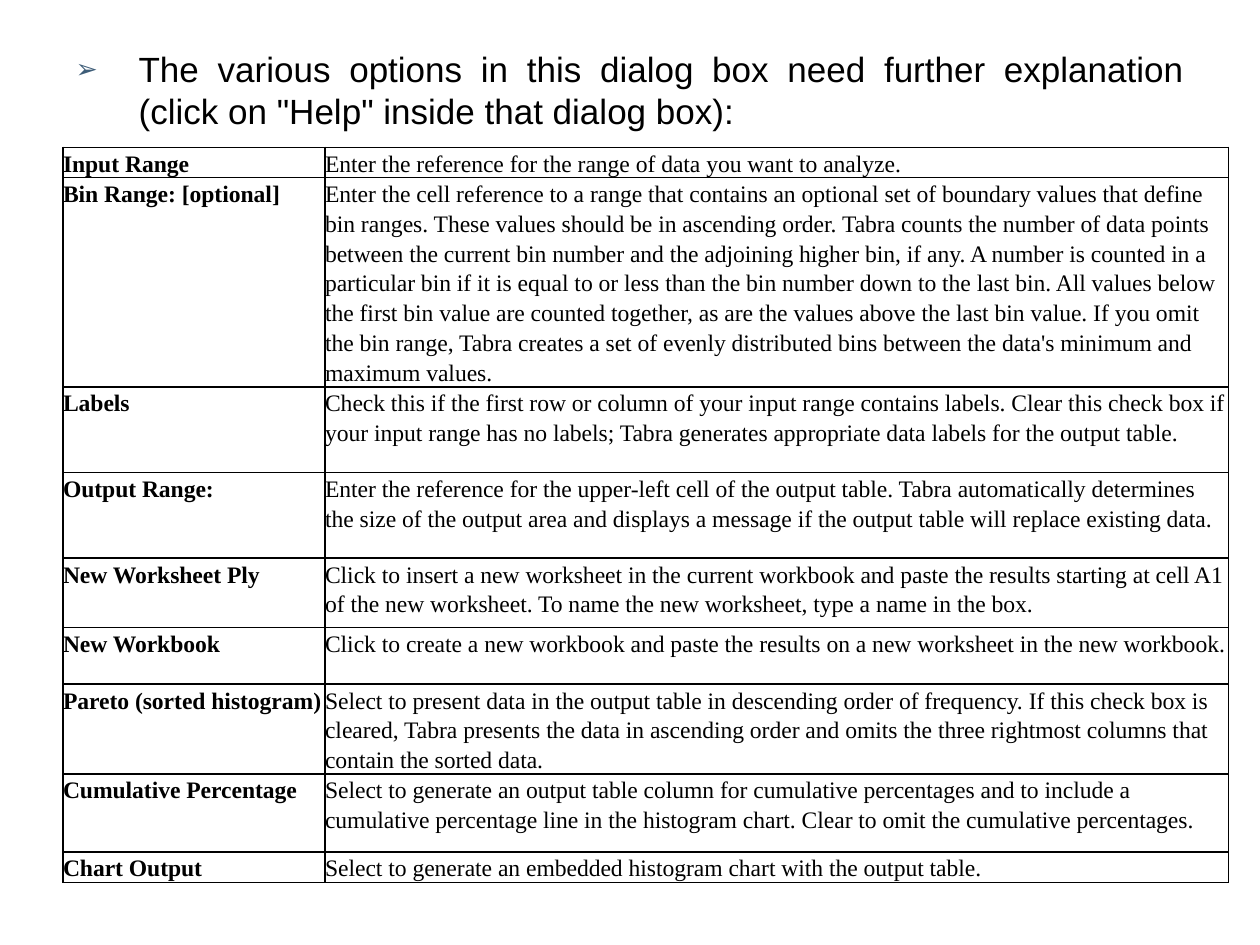
"""Build a slide that explains the options of the histogram dialog box."""
from lxml import etree
from pptx import Presentation
from pptx.dml.color import RGBColor
from pptx.enum.text import MSO_AUTO_SIZE, PP_ALIGN
from pptx.oxml.ns import qn
from pptx.util import Inches, Pt

JUSTIFY = PP_ALIGN.JUSTIFY
NO_AUTOFIT = MSO_AUTO_SIZE.NONE
BLACK = RGBColor(0x00, 0x00, 0x00)
BULLET = RGBColor(0x3E, 0x5D, 0x78)

OPTIONS = [
    (0.23, "Input Range",
     "Enter the reference for the range of data you want to analyze."),
    (1.58, "Bin Range: [optional]",
     "Enter the cell reference to a range that contains an optional set of boundary "
     "values that define bin ranges. These values should be in ascending order. Tabra "
     "counts the number of data points between the current bin number and the adjoining "
     "higher bin, if any. A number is counted in a particular bin if it is equal to or "
     "less than the bin number down to the last bin. All values below the first bin value "
     "are counted together, as are the values above the last bin value. If you omit the "
     "bin range, Tabra creates a set of evenly distributed bins between the data's "
     "minimum and maximum values."),
    (0.68, "Labels",
     "Check this if the first row or column of your input range contains labels. Clear "
     "this check box if your input range has no labels; Tabra generates appropriate data "
     "labels for the output table."),
    (0.68, "Output Range:",
     "Enter the reference for the upper-left cell of the output table. Tabra automatically "
     "determines the size of the output area and displays a message if the output table "
     "will replace existing data."),
    (0.55, "New Worksheet Ply",
     "Click to insert a new worksheet in the current workbook and paste the results "
     "starting at cell A1 of the new worksheet. To name the new worksheet, type a name in "
     "the box."),
    (0.45, "New Workbook",
     "Click to create a new workbook and paste the results on a new worksheet in the new "
     "workbook."),
    (0.68, "Pareto (sorted histogram)",
     "Select to present data in the output table in descending order of frequency. If this "
     "check box is cleared, Tabra presents the data in ascending order and omits the three "
     "rightmost columns that contain the sorted data."),
    (0.62, "Cumulative Percentage",
     "Select to generate an output table column for cumulative percentages and to include "
     "a cumulative percentage line in the histogram chart. Clear to omit the cumulative "
     "percentages."),
    (0.24, "Chart Output",
     "Select to generate an embedded histogram chart with the output table."),
]


def style_run(r, font, size, bold=False):
    r.font.name = font
    r.font.size = Pt(size)
    r.font.bold = bold
    r.font.color.rgb = BLACK


def add_borders(cell):
    tc_pr = cell._tc.get_or_add_tcPr()
    for side in ("a:lnL", "a:lnR", "a:lnT", "a:lnB"):
        ln = etree.SubElement(tc_pr, qn(side), w=str(Pt(1)))
        fill = etree.SubElement(ln, qn("a:solidFill"))
        etree.SubElement(fill, qn("a:srgbClr"), val=str(BLACK))


prs = Presentation()
prs.slide_width = Inches(10)
prs.slide_height = Inches(7.5)
s = prs.slides.add_slide(prs.slide_layouts[1])
title = s.shapes.title
title.element.getparent().remove(title.element)

body = s.placeholders[1]
body.left, body.top = Inches(0.5), Inches(0.33)
body.width, body.height = Inches(9), Inches(6.32)
tf = body.text_frame
tf.auto_size = NO_AUTOFIT
p = tf.paragraphs[0]
p.text = ('The various options in this dialog box need further explanation '
          '(click on "Help" inside that dialog box):')
p.alignment = JUSTIFY
p.space_before = Pt(6)
style_run(p.runs[0], "Arial", 20)
p_pr = p._p.get_or_add_pPr()
p_pr.set("marL", str(Inches(0.5)))
p_pr.set("indent", str(-Inches(0.5)))
bu_clr = etree.SubElement(p_pr, qn("a:buClr"))
etree.SubElement(bu_clr, qn("a:srgbClr"), val=str(BULLET))
etree.SubElement(p_pr, qn("a:buSzPct"), val="76000")
etree.SubElement(p_pr, qn("a:buFont"), typeface="Arial")
etree.SubElement(p_pr, qn("a:buChar"), char="➢")

total = sum(height for height, name, text in OPTIONS)
table = s.shapes.add_table(len(OPTIONS), 2, Inches(0.5), Inches(1.17),
                           Inches(9.25), Inches(total)).table
table.first_row = False
table.horz_banding = False
table.columns[0].width = Inches(2.08)
table.columns[1].width = Inches(7.17)

for row, (height, *texts) in zip(table.rows, OPTIONS):
    row.height = Inches(height)
    for col, (cell, text) in enumerate(zip(row.cells, texts)):
        cell.margin_left = cell.margin_right = 0
        cell.margin_top = cell.margin_bottom = 0
        add_borders(cell)
        cell.fill.background()
        p = cell.text_frame.paragraphs[0]
        p.text = text
        p.line_spacing = 1.15
        style_run(p.runs[0], "Times New Roman", 13.5, bold=col == 0)

prs.save("out.pptx")
